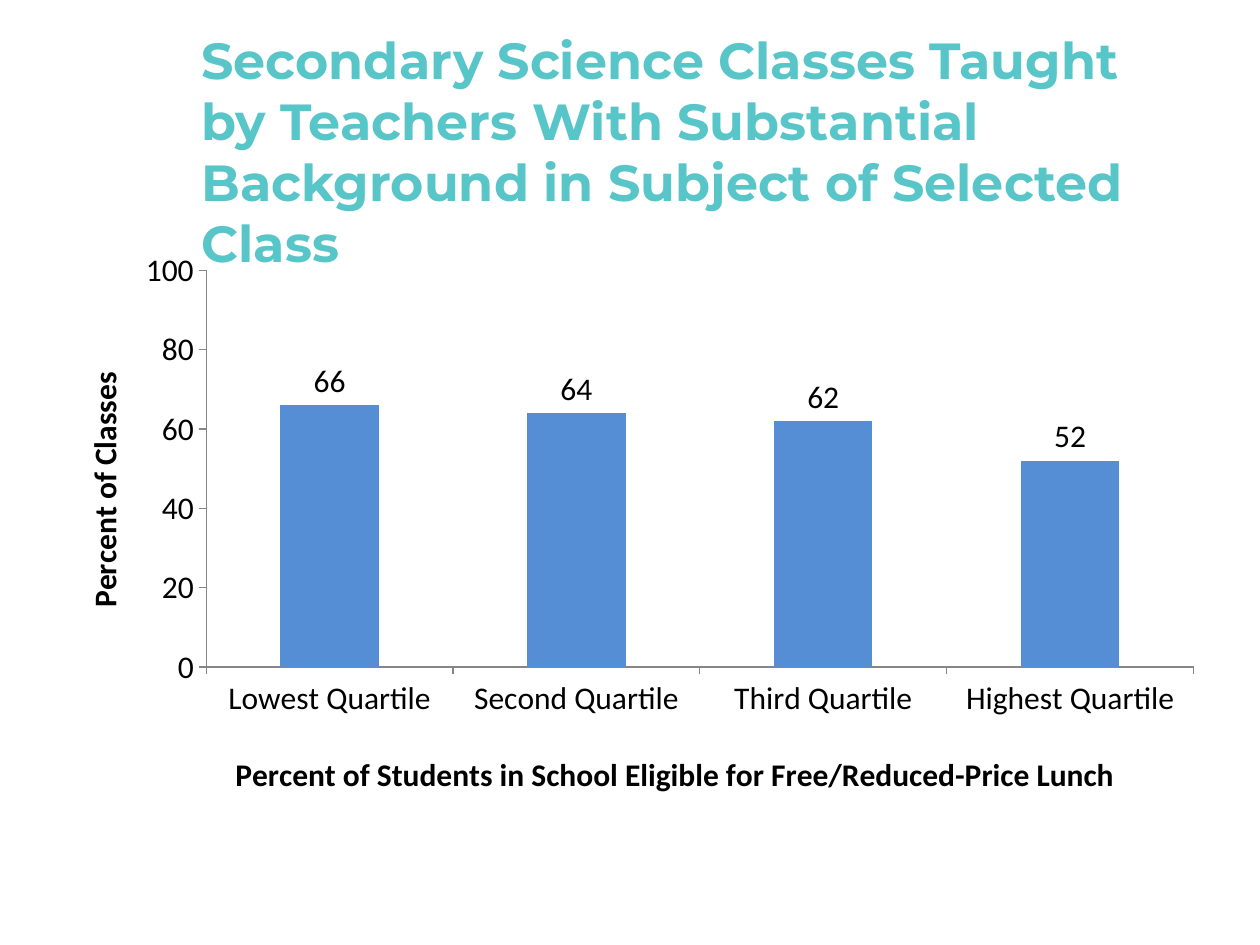
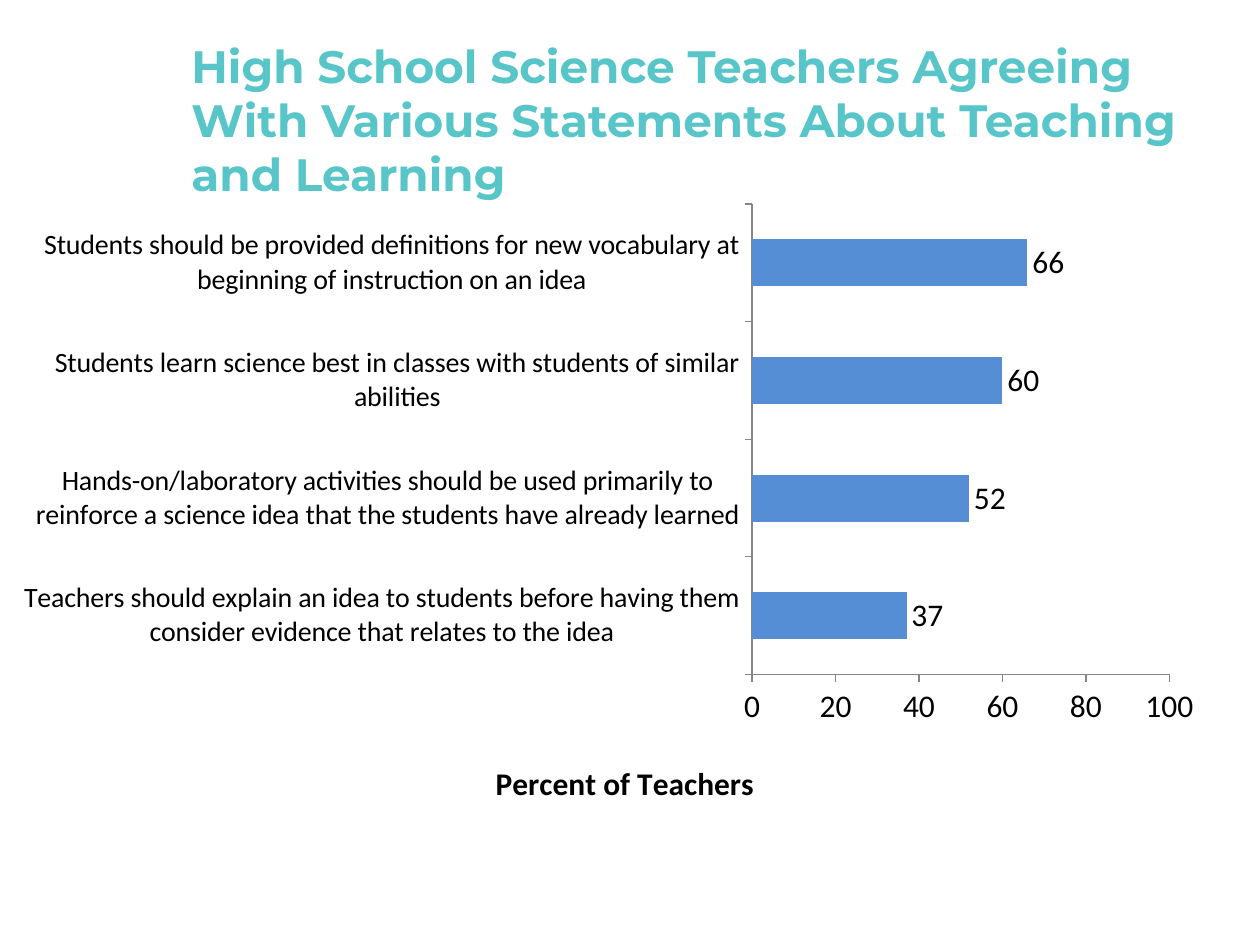
"""Build two slides of bar charts about science teaching."""
import pptx
import pptx.chart.data
import pptx.dml.color
import pptx.enum.chart
import pptx.enum.text
import pptx.oxml
import pptx.oxml.ns
import pptx.util

Inches = pptx.util.Inches
Pt = pptx.util.Pt
enums = pptx.enum.chart
COLORS = {"title": "58C5C9", "bar": "558ED5", "text": "000000", "axis": "868686"}
HEAD, BODY = "Montserrat", "Calibri"


def color(name):
    return pptx.dml.color.RGBColor.from_string(COLORS[name])


def style(font, face, size, name, bold=False):
    font.name, font.size, font.bold = face, Pt(size), bold
    font.color.rgb = color(name)


def add_title(slide, text, box, size):
    frame = slide.shapes.add_textbox(*map(Inches, box)).text_frame
    frame.word_wrap = True
    frame.margin_top = 0
    frame.vertical_anchor = pptx.enum.text.MSO_ANCHOR.TOP
    run = frame.paragraphs[0].add_run()
    run.text = text
    style(run.font, HEAD, size, "title", True)


def place(parent, index, inner=False, **spots):
    """Give a chart part a manual layout in fractions of the chart."""
    for old in parent.findall(pptx.oxml.ns.qn("c:layout")):
        parent.remove(old)
    target = '<c:layoutTarget val="inner"/>' if inner else ""
    modes = "".join(f'<c:{key}Mode val="edge"/>' for key in "xy")
    sizes = "".join(f'<c:{key} val="{val}"/>' for key, val in spots.items())
    parent.insert(index, pptx.oxml.parse_xml(
        f'<c:layout {pptx.oxml.ns.nsdecls("c")}><c:manualLayout>'
        f"{target}{modes}{sizes}</c:manualLayout></c:layout>"))


def name_axis(axis, text, x, y, turn=0):
    frame = axis.axis_title.text_frame
    run = frame.paragraphs[0].add_run()
    run.text = text
    style(run.font, BODY, 18, "text", True)
    frame._txBody.bodyPr.set("rot", str(turn * 60000))
    frame._txBody.bodyPr.set("vert", "horz")
    place(axis.axis_title._element, 1, x=x, y=y)


def style_axis(axis, size):
    axis.has_major_gridlines = False
    axis.major_tick_mark = enums.XL_TICK_MARK.OUTSIDE
    axis.minor_tick_mark = enums.XL_TICK_MARK.NONE
    axis.format.line.color.rgb = color("axis")
    axis.format.line.width = Pt(0.75)
    style(axis.tick_labels.font, BODY, size, "text")


def add_bars(slide, kind, box, rows, plot, gap, size=18):
    data = pptx.chart.data.CategoryChartData()
    data.categories = list(rows)
    data.add_series("Series 1", list(rows.values()))
    chart = slide.shapes.add_chart(kind, *map(Inches, box), data).chart
    chart.has_title = chart.has_legend = False
    style(chart.font, BODY, 18, "text")
    style_axis(chart.category_axis, size)
    style_axis(chart.value_axis, 18)
    scale = chart.value_axis
    scale.minimum_scale, scale.maximum_scale, scale.major_unit = 0, 100, 20
    bars = chart.plots[0]
    bars.gap_width, bars.vary_by_categories = gap, False
    bars.has_data_labels = True
    labels = bars.data_labels
    labels.show_value = True
    labels.position = enums.XL_LABEL_POSITION.OUTSIDE_END
    style(labels.font, BODY, 18, "text")
    fill = bars.series[0].format.fill
    fill.solid()
    fill.fore_color.rgb = color("bar")
    place(chart._chartSpace.chart.plotArea, 0, True, **plot)
    return chart


def add_classes(slide):
    add_title(slide, "Secondary Science Classes Taught by Teachers With Substantial "
              "Background in Subject of Selected Class", (1.5, 0.23, 8, 1.25), 29)
    rows = {"Lowest Quartile": 66, "Second Quartile": 64,
            "Third Quartile": 62, "Highest Quartile": 52}
    chart = add_bars(slide, enums.XL_CHART_TYPE.COLUMN_CLUSTERED,
                     (0.33, 1.92, 9.33, 4.5), rows,
                     dict(x=0.14, y=0.05, w=0.84, h=0.7), 151)
    name_axis(chart.category_axis, "Percent of Students in School Eligible for "
              "Free/Reduced-Price Lunch", 0.16, 0.89)
    name_axis(chart.value_axis, "Percent of Classes", 0.03, 0.22, -90)


def add_beliefs(slide):
    rows = {
        "Teachers should explain an idea to students before having them "
        "consider evidence that relates to the idea": 37,
        "Hands-on/laboratory activities should be used primarily to "
        "reinforce a science idea that the students have already learned": 52,
        "Students learn science best in classes with students of similar "
        "abilities": 60,
        "Students should be provided definitions for new vocabulary at "
        "beginning of instruction on an idea": 66,
    }
    chart = add_bars(slide, enums.XL_CHART_TYPE.BAR_CLUSTERED,
                     (0.19, 1.52, 9.47, 4.98), rows,
                     dict(x=0.61, y=0.02, w=0.35, h=0.75), 150, 16)
    name_axis(chart.value_axis, "Percent of Teachers", 0.39, 0.9)
    add_title(slide, "High School Science Teachers Agreeing With Various Statements "
              "About Teaching and Learning", (1.42, 0.3, 8.08, 1.25), 25.9)


def main():
    deck = pptx.Presentation()
    deck.slide_width, deck.slide_height = Inches(10), Inches(7.5)
    for build in (add_classes, add_beliefs):
        build(deck.slides.add_slide(deck.slide_layouts[6]))
    deck.save("out.pptx")


if __name__ == "__main__":
    main()
